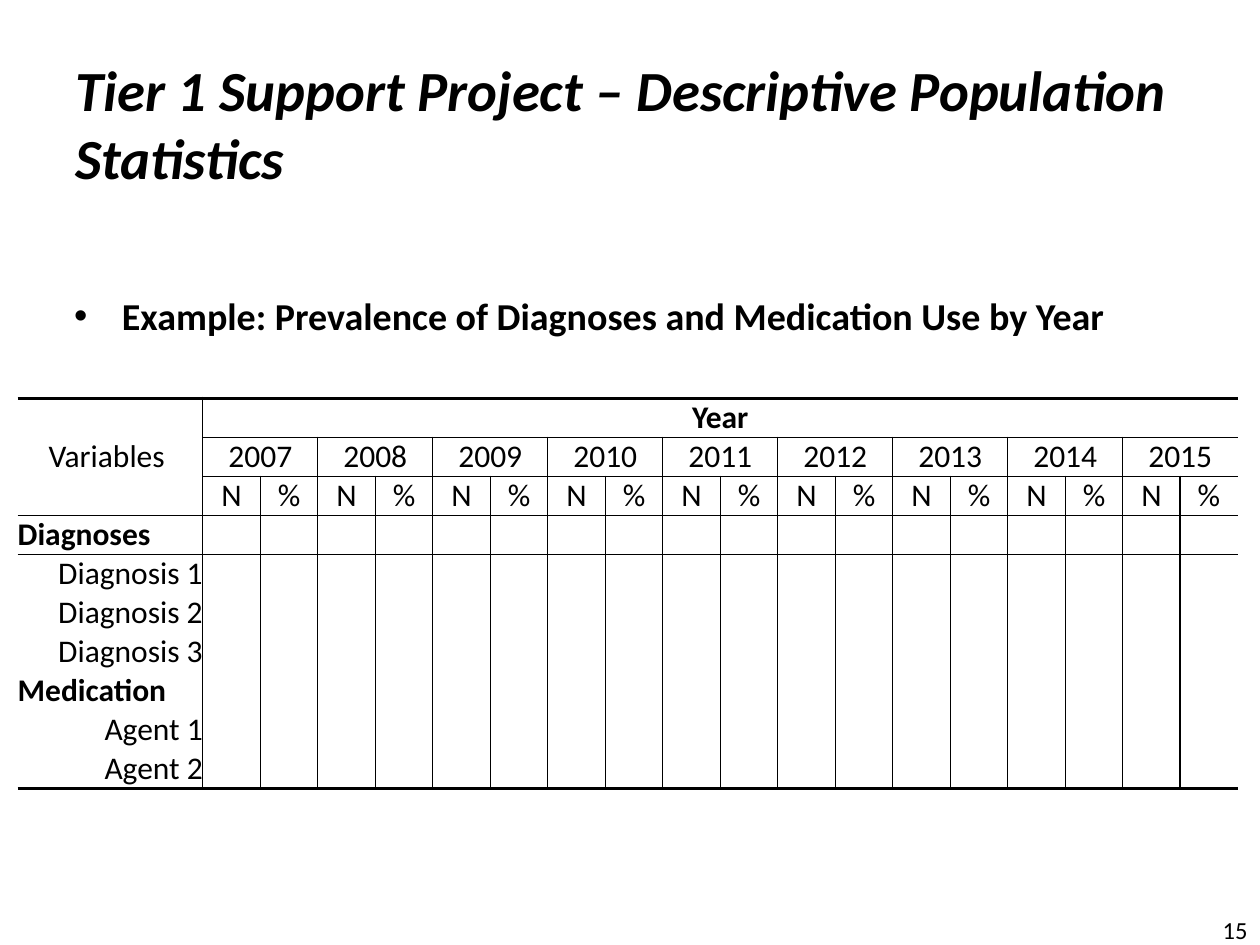
from lxml import etree
from pptx import Presentation
from pptx.dml.color import RGBColor
from pptx.enum import text
from pptx.oxml import ns
from pptx.util import Inches, Pt

BLACK = RGBColor(0, 0, 0)
WHITE = RGBColor(255, 255, 255)
LEFT, MID, RIGHT = text.PP_ALIGN.LEFT, text.PP_ALIGN.CENTER, text.PP_ALIGN.RIGHT
THIN, FINE, THICK = 0.75, 1, 2


def write(para, words, align, form):
    para.alignment = align
    run = para.add_run()
    run.text = words
    for key, val in form.items():
        setattr(run.font, key, val)
    run.font.name = "Calibri"
    run.font.color.rgb = BLACK


def rule(cell, side, width):
    line = etree.SubElement(cell._tc.get_or_add_tcPr(), ns.qn("a:ln" + side), w=str(Pt(width)))
    if width:
        fill = etree.SubElement(line, ns.qn("a:solidFill"))
        etree.SubElement(fill, ns.qn("a:srgbClr"), val=str(BLACK))
    else:
        etree.SubElement(line, ns.qn("a:noFill"))


deck = Presentation()
deck.slide_width, deck.slide_height = Inches(10), Inches(7.5)
slide = deck.slides.add_slide(deck.slide_layouts[6])

TOP, CORE = text.MSO_ANCHOR.TOP, text.MSO_ANCHOR.MIDDLE
boxes = [
    ("Tier 1 Support Project – Descriptive Population Statistics", (0.5, 0.44, 9, 1.07),
     CORE, LEFT, {"size": Pt(32.4), "bold": True, "italic": True}),
    ("Example: Prevalence of Diagnoses and Medication Use by Year", (0.49, 2.27, 9, 0.66),
     TOP, LEFT, {"size": Pt(21.7), "bold": True}),
    ("15", (7.75, 7.18, 2.25, 0.4), CORE, RIGHT, {"size": Pt(14)}),
]
for words, place, anchor, align, form in boxes:
    frame = slide.shapes.add_textbox(*map(Inches, place)).text_frame
    frame.word_wrap = True
    frame.vertical_anchor = anchor
    para = frame.paragraphs[0]
    if words.startswith("Example"):
        props = para._p.get_or_add_pPr()
        props.set("marL", str(Inches(0.38)))
        props.set("indent", str(-Inches(0.38)))
        etree.SubElement(props, ns.qn("a:buFont"), typeface="Arial")
        etree.SubElement(props, ns.qn("a:buChar"), char="•")
    write(para, words, align, form)

ROWS, COLS = 10, 19
HIGH = Inches(0.31)
frame = slide.shapes.add_table(ROWS, COLS, Inches(0.14), Inches(3.16), Inches(9.69), HIGH * ROWS)
table = frame.table
table.first_row = table.horz_banding = False
style = table._tbl.tblPr.find(ns.qn("a:tableStyleId"))
style.text = "{2D5ABB26-0587-4C30-8999-92F81FD0307C}"
for row in table.rows:
    row.height = HIGH
for i, col in enumerate(table.columns):
    col.width = Inches(8.22 / 18) if i else Inches(1.47)

table.cell(0, 1).merge(table.cell(0, COLS - 1))
for c in range(1, COLS, 2):
    table.cell(1, c).merge(table.cell(1, c + 1))

level = {0: THICK, 1: THIN, 2: THIN, 3: THIN, 4: THIN, ROWS: THICK}
for r in range(ROWS):
    for c in range(COLS):
        cell = table.cell(r, c)
        for side, edge in (("L", c), ("R", c + 1)):
            if edge in (0, COLS):
                width = 0
            elif edge % 2:
                width = THIN if r or edge == 1 else 0
            else:
                width = FINE if r > 1 else 0
            rule(cell, side, width)
        for side, edge in (("T", r), ("B", r + 1)):
            rule(cell, side, 0 if c == 0 and edge in (1, 2) else level.get(edge, 0))
        cell.fill.solid()
        cell.fill.fore_color.rgb = WHITE
        for edge in ("left", "right", "top", "bottom"):
            setattr(cell, "margin_" + edge, 0)

items = [(0, 1, "Year", MID, True), (1, 0, "Variables ", MID, False)]
items += [(1, 1 + 2 * i, str(2007 + i), MID, False) for i in range(9)]
items += [(2, c, "N" if c % 2 else "%", MID, False) for c in range(1, COLS)]
names = ["Diagnoses", "Diagnosis 1", "Diagnosis 2", "Diagnosis 3", "Medication", "Agent 1", "Agent 2"]
for r, name in enumerate(names, 3):
    head = name in ("Diagnoses", "Medication")
    items.append((r, 0, name, LEFT if head else RIGHT, head))
for r, c, words, align, bold in items:
    para = table.cell(r, c).text_frame.paragraphs[0]
    write(para, words, align, {"size": Pt(18), "bold": bold})

deck.save("out.pptx")
